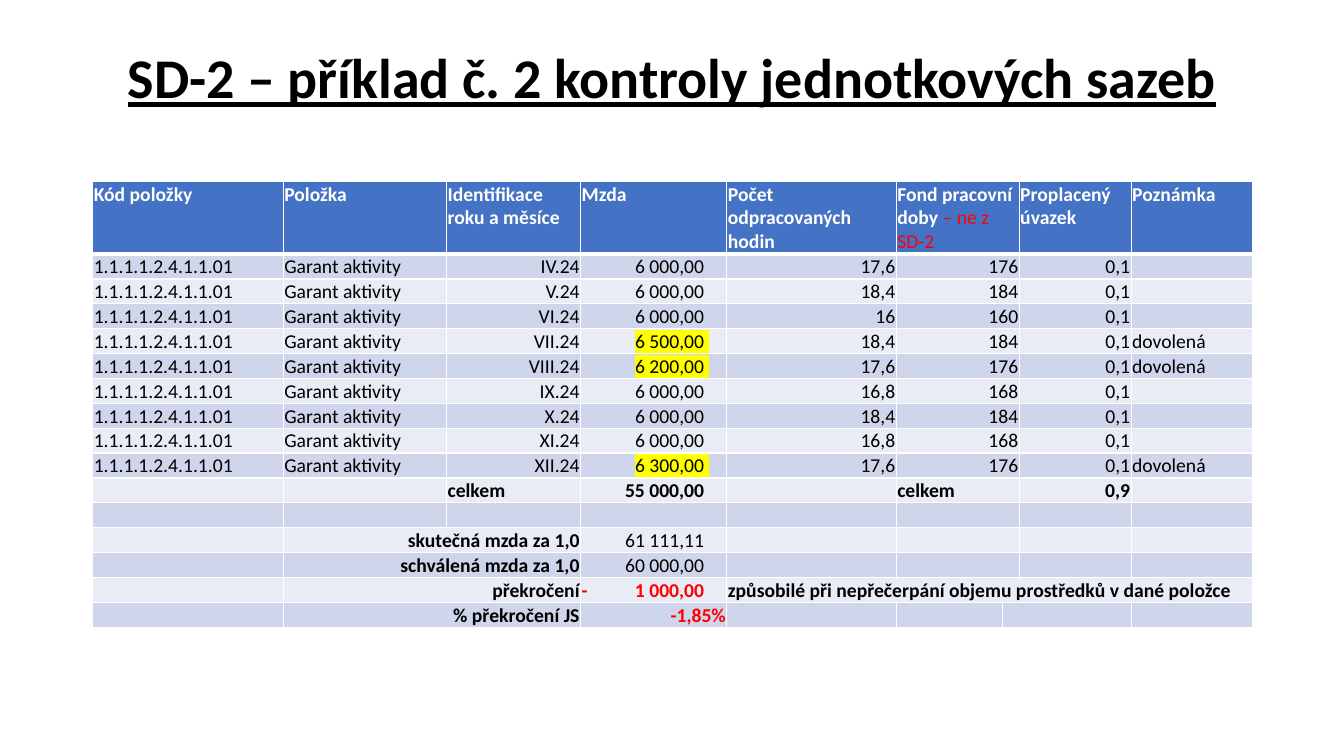
from lxml.etree import SubElement
from pptx import Presentation
from pptx.dml.color import RGBColor
from pptx.enum.text import MSO_ANCHOR, PP_ALIGN
from pptx.oxml import parse_xml
from pptx.oxml.ns import nsdecls, qn
from pptx.util import Inches, Pt

TITLE = "SD-2 – příklad č. 2 kontroly jednotkových sazeb"
HEAD = ["Kód položky", "Položka", "Identifikace roku a měsíce", "Mzda",
        "Počet odpracovaných hodin", "Fond pracovní doby ", "",
        "Proplacený úvazek", "Poznámka"]
HINT = "– ne z SD-2"
CODE, ROLE, SHARE = "1.1.1.1.2.4.1.1.01", "Garant aktivity", "0,1"
MONTHS = [  # month, wage, hours worked, working time fund, note
    ("IV.24", "6 000,00", "17,6", "176", ""),
    ("V.24", "6 000,00", "18,4", "184", ""),
    ("VI.24", "6 000,00", "16", "160", ""),
    ("VII.24", "6 500,00", "18,4", "184", "dovolená"),
    ("VIII.24", "6 200,00", "17,6", "176", "dovolená"),
    ("IX.24", "6 000,00", "16,8", "168", ""),
    ("X.24", "6 000,00", "18,4", "184", ""),
    ("XI.24", "6 000,00", "16,8", "168", ""),
    ("XII.24", "6 300,00", "17,6", "176", "dovolená"),
]
SUMS = [  # column: text
    {2: "celkem", 3: "\t55 000,00 ", 5: "celkem", 7: "0,9"},
    {},
    {1: "skutečná mzda za 1,0", 3: "\t61 111,11 "},
    {1: "schválená mzda za 1,0", 3: "\t60 000,00 "},
    {1: "překročení", 3: "-\t1 000,00 ",
     4: "způsobilé při nepřečerpání objemu prostředků v dané položce"},
    {1: "% překročení JS", 3: "-1,85%"},
]
WIDTHS = [1.89, 1.62, 1.33, 1.45, 1.68, 1.05, 0.17, 1.11, 1.2]
HEAD_H, ROW_H, TAB = 0.71, 0.24, 1.26
BLUE, BANDS = "4472C4", ("E9EBF5", "CFD5EA")
WHITE, BLACK, RED, YELLOW = "FFFFFF", "000000", "FF0000", "FFFF00"
FONT, SIZE = "Calibri", 14

rows = [dict(enumerate(HEAD))]
for month, wage, hours, fund, note in MONTHS:
    rows.append({0: CODE, 1: ROLE, 2: month, 3: f"\t{wage} ", 4: hours,
                 5: fund, 7: SHARE, 8: note})
rows += SUMS
FIRST = 1 + len(MONTHS)  # first row of the sums
LAST = len(rows) - 1


def color(code):
    return RGBColor.from_string(code)


def style(font, code, **form):
    font.color.rgb = color(code)
    for name, value in form.items():
        setattr(font, name, value)


def border(cell, side, width):
    return parse_xml(
        f'<a:ln{side} {nsdecls("a")} w="{Pt(width)}"><a:solidFill>'
        f'<a:srgbClr val="{WHITE}"/></a:solidFill></a:ln{side}>')


def write(cell, row, col, text):
    para = cell.text_frame.paragraphs[0]
    if not text:
        SubElement(para._p, qn("a:endParaRPr"), sz=str(SIZE * 100))
        return
    head, item = row == 0, 0 < row < FIRST
    right = (col in (2, 4, 5, 7) if item else
             not head and (col in (1, 7) or text.endswith("%")))
    if right:
        para.alignment = PP_ALIGN.RIGHT
    if "\t" in text:
        tabs = SubElement(para._p.get_or_add_pPr(), qn("a:tabLst"))
        SubElement(tabs, qn("a:tab"), pos=str(Inches(TAB)), algn="r")
    over = col == 3 and row >= LAST - 1
    bold = head or row == FIRST or row >= LAST - 1 or (row > FIRST and col == 1)
    run = para.add_run()
    run.text = text
    style(run.font, WHITE if head else RED if over else BLACK,
          name=FONT, size=Pt(SIZE), bold=bold)
    if item and col == 3 and rows[row][8]:
        mark = parse_xml(f'<a:highlight {nsdecls("a")}>'
                         f'<a:srgbClr val="{YELLOW}"/></a:highlight>')
        run._r.rPr.find(qn("a:solidFill")).addnext(mark)
    if head and col == 5:
        hint = para.add_run()
        hint.text = HINT
        style(hint.font, RED, name=FONT, size=Pt(SIZE), bold=False)


def build(table):
    for col, width in enumerate(WIDTHS):
        table.columns[col].width = Inches(width)
    for row, texts in enumerate(rows):
        table.rows[row].height = Inches(ROW_H if row else HEAD_H)
        for col in range(len(WIDTHS)):
            cell = table.cell(row, col)
            cell.margin_left = cell.margin_right = Inches(0.01)
            cell.margin_top, cell.margin_bottom = Inches(0.01), 0
            cell.vertical_anchor = MSO_ANCHOR.BOTTOM if row else MSO_ANCHOR.TOP
            cell.fill.solid()
            cell.fill.fore_color.rgb = color(BANDS[row % 2] if row else BLUE)
            for spot, side in enumerate("LRTB"):
                thick = (row, side) in ((0, "B"), (1, "T"))
                line = border(cell, side, 3 if thick else 1)
                cell._tc.tcPr.insert(spot, line)
            write(cell, row, col, texts.get(col, ""))
        spans = [(5, 6)]
        if row > FIRST + 1:
            spans.append((1, 2))
        if row == LAST - 1:
            spans[0] = (4, 8)
        if row == LAST:
            spans[0] = (6, 7)
        for start, end in spans:
            table.cell(row, start).merge(table.cell(row, end))


def main():
    deck = Presentation()
    deck.slide_width, deck.slide_height = Inches(13.33), Inches(7.5)
    slide = deck.slides.add_slide(deck.slide_layouts[5])

    title = slide.shapes.title
    title.left, title.top = Inches(1.1), Inches(0.19)
    title.width, title.height = Inches(11.13), Inches(1.22)
    title.text_frame.text = TITLE
    title.text_frame.vertical_anchor = MSO_ANCHOR.MIDDLE
    para = title.text_frame.paragraphs[0]
    para.alignment, para.line_spacing = PP_ALIGN.CENTER, 0.9
    style(para.runs[0].font, BLACK, name=FONT, size=Pt(40), bold=True,
          underline=True)

    high = HEAD_H + ROW_H * LAST
    frame = slide.shapes.add_table(
        len(rows), len(WIDTHS), Inches(0.92), Inches(1.8),
        Inches(sum(WIDTHS)), Inches(high))
    build(frame.table)
    deck.save("out.pptx")


if __name__ == "__main__":
    main()
